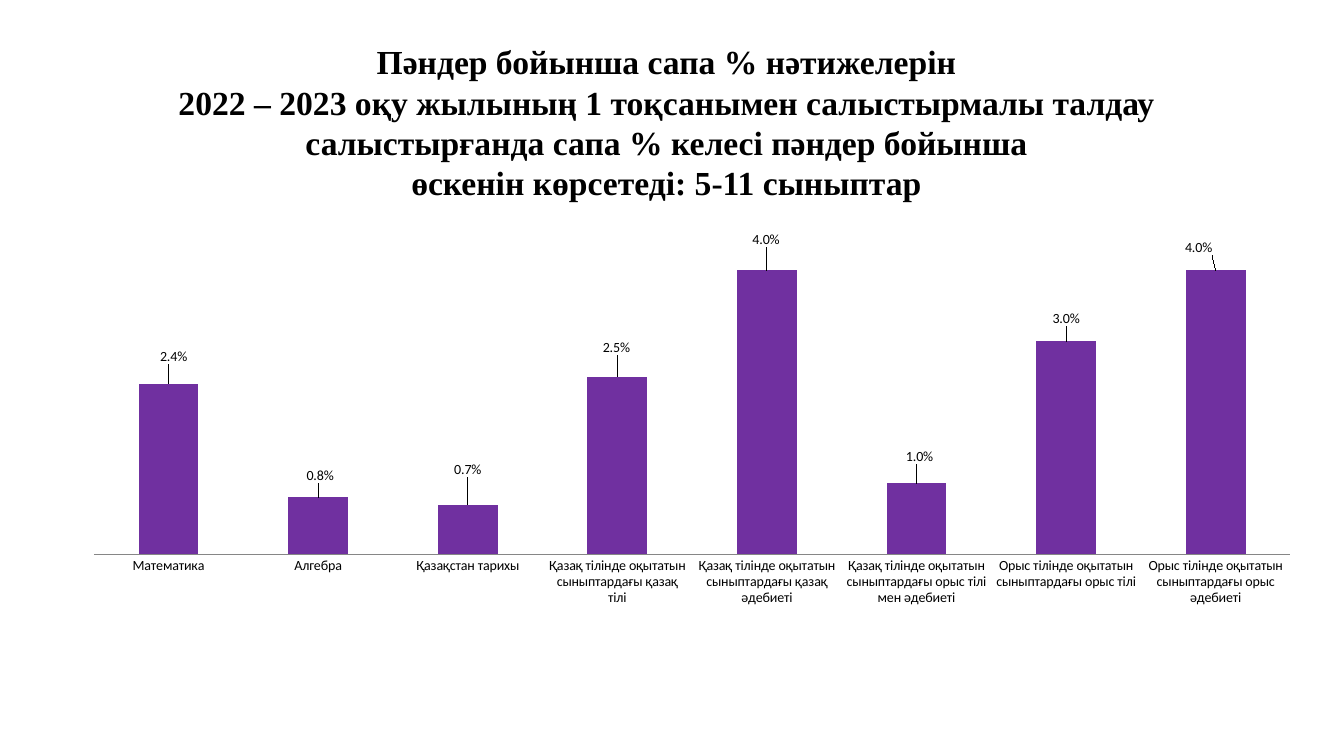
"""Build a slide comparing subject quality percentages for grades 5-11."""
import pptx
import pptx.chart.data
import pptx.dml.color
import pptx.enum.chart
import pptx.enum.text
import pptx.oxml
import pptx.util
from pptx.util import Inches

BLACK = pptx.dml.color.RGBColor(0x00, 0x00, 0x00)
PURPLE = pptx.dml.color.RGBColor(0x70, 0x30, 0xA0)
AXIS_GRAY = pptx.dml.color.RGBColor(0x86, 0x86, 0x86)
CHART_NS = "http://schemas.openxmlformats.org/drawingml/2006/chart"
CHART_WIDTH, CHART_HEIGHT = 12.36, 3.83


def manual_layout(**settings):
    entries = "".join(f'<c:{name} val="{value}"/>' for name, value in settings.items())
    return pptx.oxml.parse_xml(
        f'<c:layout xmlns:c="{CHART_NS}"><c:manualLayout>{entries}</c:manualLayout></c:layout>'
    )


TITLE_LINES = [
    "Пәндер бойынша сапа % нәтижелерін",
    "2022 – 2023 оқу жылының 1 тоқсанымен салыстырмалы талдау "
    "салыстырғанда сапа % келесі пәндер бойынша",
    "өскенін көрсетеді: 5-11 сыныптар",
]
# subject, quality growth, label shift right and down in inches
SUBJECTS = [
    ("Математика", 0.024, 0.05, -0.15),
    ("Алгебра", 0.008, 0.02, -0.1),
    ("Қазақстан тарихы", 0.007, 0, -0.23),
    ("Қазақ тілінде оқытатын сыныптардағы қазақ тілі", 0.025, -0.01, -0.17),
    ("Қазақ тілінде оқытатын сыныптардағы қазақ әдебиеті", 0.04, -0.01, -0.19),
    ("Қазақ тілінде оқытатын сыныптардағы орыс тілі мен әдебиеті", 0.01, 0.03, -0.15),
    ("Орыс тілінде оқытатын сыныптардағы орыс тілі", 0.03, 0, -0.11),
    ("Орыс тілінде оқытатын сыныптардағы орыс әдебиеті", 0.04, -0.17, -0.11),
]

presentation = pptx.Presentation()
presentation.slide_width = Inches(13.33)
presentation.slide_height = Inches(7.5)
slide = presentation.slides.add_slide(presentation.slide_layouts[6])

title = slide.shapes.add_textbox(Inches(1.67), Inches(0.36), Inches(9.88), Inches(1.72))
title.text_frame.word_wrap = True
title.text_frame.text = "\n".join(TITLE_LINES)
for line in title.text_frame.paragraphs:
    line.alignment = pptx.enum.text.PP_ALIGN.CENTER
    for run in line.runs:
        run.font.name = "Times New Roman"
        run.font.size = pptx.util.Pt(24)
        run.font.bold = True
        run.font.color.rgb = BLACK

growth_data = pptx.chart.data.CategoryChartData(number_format="0.0%")
growth_data.categories = [subject for subject, *_ in SUBJECTS]
growth_data.add_series("Series 1", [growth for _, growth, *_ in SUBJECTS])
growth_chart = slide.shapes.add_chart(
    pptx.enum.chart.XL_CHART_TYPE.COLUMN_CLUSTERED,
    Inches(0.68), Inches(2.25), Inches(CHART_WIDTH), Inches(CHART_HEIGHT),
    growth_data,
).chart
growth_chart.has_legend = False
growth_chart.has_title = False
growth_chart.font.name = "Calibri"
growth_chart.font.size = pptx.util.Pt(10)
growth_chart.font.color.rgb = BLACK

subject_axis = growth_chart.category_axis
subject_axis.major_tick_mark = pptx.enum.chart.XL_TICK_MARK.NONE
subject_axis.format.line.color.rgb = AXIS_GRAY
subject_axis.format.line.width = pptx.util.Pt(0.75)
percent_axis = growth_chart.value_axis
percent_axis.visible = False
percent_axis.has_major_gridlines = False
percent_axis.minimum_scale = 0
percent_axis.maximum_scale = 0.045
percent_axis.tick_labels.number_format = "0.0%"
percent_axis.tick_labels.number_format_is_linked = False

columns = growth_chart.plots[0]
columns.gap_width = 150
columns.vary_by_categories = False
growth_series = columns.series[0]
growth_series.format.fill.solid()
growth_series.format.fill.fore_color.rgb = PURPLE
growth_labels = growth_series.data_labels
growth_labels.show_value = True
growth_labels.number_format = "0.0%"
growth_labels.number_format_is_linked = False
growth_labels.position = pptx.enum.chart.XL_LABEL_POSITION.OUTSIDE_END

for index, (_, _, right, down) in enumerate(SUBJECTS):
    label = growth_series.points[index].data_label
    label.font.size = pptx.util.Pt(10)
    label.position = pptx.enum.chart.XL_LABEL_POSITION.OUTSIDE_END
    label_index = growth_series._element.xpath(f"c:dLbls/c:dLbl/c:idx[@val='{index}']")[0]
    label_index.addnext(manual_layout(x=right / CHART_WIDTH, y=down / CHART_HEIGHT))

plot_area = growth_chart._chartSpace.chart.plotArea
for automatic_layout in plot_area.xpath("c:layout"):
    plot_area.remove(automatic_layout)
plot_area.insert(0, manual_layout(
    layoutTarget="inner", xMode="edge", yMode="edge",
    x=0.25 / CHART_WIDTH, y=0.08 / CHART_HEIGHT,
    w=11.87 / CHART_WIDTH, h=3.17 / CHART_HEIGHT,
))

presentation.save("out.pptx")
